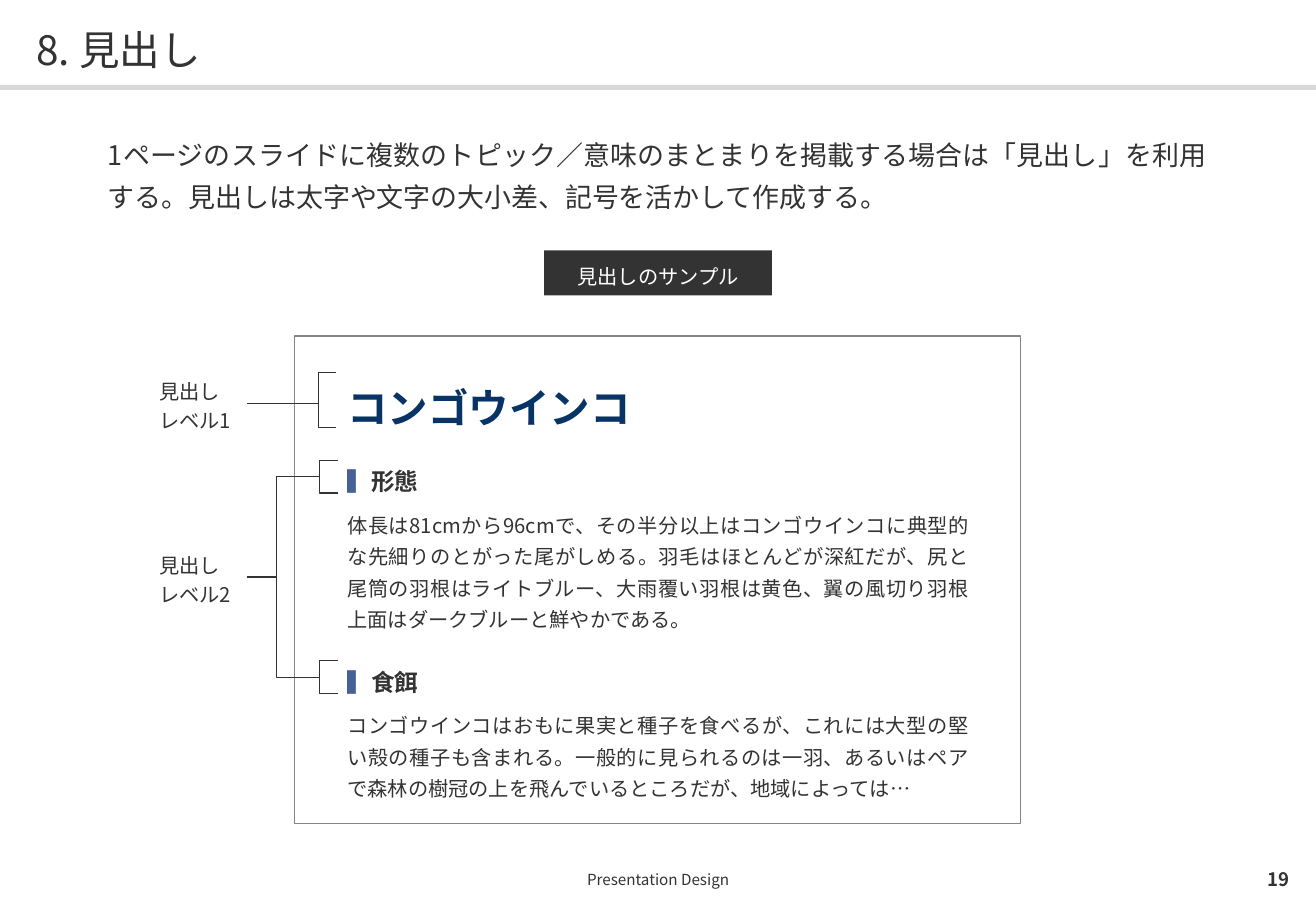
"""Build the slide on heading levels with an annotated sample."""
from lxml.etree import SubElement
from pptx import Presentation
from pptx.dml.color import RGBColor
from pptx.enum.shapes import MSO_CONNECTOR, MSO_SHAPE
from pptx.enum.text import MSO_ANCHOR, MSO_AUTO_SIZE, PP_ALIGN
from pptx.oxml.ns import qn
from pptx.util import Pt

FONT = "Noto Sans CJK JP"
DARK, NAVY, BLUE = "333333", "073365", "466098"
WHITE, GRAY, PALE = "FFFFFF", "858585", "D9D9D9"

TITLE = "8. 見出し"
LEAD = ("1ページのスライドに複数のトピック／意味のまとまりを掲載する場合は「見出し」を利用する。"
        "見出しは太字や文字の大小差、記号を活かして作成する。")
TAG = "見出しのサンプル"
SAMPLE_TITLE = "コンゴウインコ"
SECTIONS = [
    ("形態", "体長は81cmから96cmで、その半分以上はコンゴウインコに典型的な先細りのとがった尾がしめる。"
             "羽毛はほとんどが深紅だが、尻と尾筒の羽根はライトブルー、大雨覆い羽根は黄色、"
             "翼の風切り羽根上面はダークブルーと鮮やかである。"),
    ("食餌", "コンゴウインコはおもに果実と種子を食べるが、これには大型の堅い殻の種子も含まれる。"
             "一般的に見られるのは一羽、あるいはペアで森林の樹冠の上を飛んでいるところだが、地域によっては…"),
]
FOOTER, PAGE = "Presentation Design", "19"

LEVEL1_Y = 239
LEVEL2_YS = (282.6, 401.4)
LEVEL2_Y = sum(LEVEL2_YS) / 2
LABELS = [("レベル1", LEVEL1_Y, 188.6), ("レベル2", LEVEL2_Y, 164)]
BRACKETS = [(188.6, 237.2, 10.8, 32.4)]
BRACKETS += [(189.4, y, 10.8, 19.4) for y in LEVEL2_YS]
BRACKETS += [(164, LEVEL2_Y, 25.4, LEVEL2_YS[1] - LEVEL2_YS[0])]


def rgb(value):
    return RGBColor.from_string(value)


def add_text(tf, runs, size=12, color=DARK, bold=False, align=PP_ALIGN.JUSTIFY,
             spacing=1.2, before=0, after=0):
    """Append one paragraph; runs is a string or a list of (text, color)."""
    p = tf.paragraphs[0]
    if p.runs:
        p = tf.add_paragraph()
    p.alignment, p.line_spacing = align, spacing
    p.space_before, p.space_after = Pt(before), Pt(after)
    for text, run_color in [(runs, color)] if isinstance(runs, str) else runs:
        r = p.add_run()
        r.text = text
        r.font.size, r.font.bold, r.font.name = Pt(size), bold, FONT
        r.font.color.rgb = rgb(run_color)
        SubElement(r.font._element, qn("a:ea"), typeface=FONT)
    return p


def set_frame(sp, anchor=MSO_ANCHOR.TOP, insets=(0, 0, 0, 0)):
    tf = sp.text_frame
    tf.word_wrap, tf.auto_size, tf.vertical_anchor = True, MSO_AUTO_SIZE.NONE, anchor
    tf.margin_left, tf.margin_top, tf.margin_right, tf.margin_bottom = map(Pt, insets)
    return tf


def add_box(s, box, anchor=MSO_ANCHOR.TOP):
    return set_frame(s.shapes.add_textbox(*map(Pt, box)), anchor)


def fill_placeholder(sp, box, anchor=MSO_ANCHOR.TOP):
    sp.left, sp.top, sp.width, sp.height = map(Pt, box)
    return set_frame(sp, anchor)


def add_shape(s, kind, box, fill=None, line=None):
    sp = s.shapes.add_shape(kind, *map(Pt, box))
    sp.shadow.inherit = False
    if fill:
        sp.fill.solid()
        sp.fill.fore_color.rgb = rgb(fill)
    else:
        sp.fill.background()
    if line:
        sp.line.color.rgb, sp.line.width = rgb(line), Pt(0.75)
    else:
        sp.line.fill.background()
    return sp


def add_line(s, x1, x2, y):
    c = s.shapes.add_connector(MSO_CONNECTOR.STRAIGHT, Pt(x1), Pt(y), Pt(x2), Pt(y))
    c.line.color.rgb, c.line.width = rgb(DARK), Pt(0.75)
    SubElement(c._element.spPr, qn("a:effectLst"))


def main():
    prs = Presentation()
    prs.slide_width, prs.slide_height = Pt(780), Pt(540)
    s = prs.slides.add_slide(prs.slide_layouts[1])

    add_shape(s, MSO_SHAPE.RECTANGLE, (0, 50.4, 780, 2.9), fill=PALE)
    tf = fill_placeholder(s.shapes.title, (21.6, 12.2, 737, 31), MSO_ANCHOR.MIDDLE)
    add_text(tf, TITLE, size=24, align=PP_ALIGN.LEFT, spacing=1.1)

    tf = fill_placeholder(s.placeholders[1], (64, 76.3, 652, 49))
    pPr = add_text(tf, LEAD, size=16, spacing=1.3)._p.get_or_add_pPr()
    pPr.set("marL", "0")
    pPr.set("indent", "0")
    SubElement(pPr, qn("a:buNone"))

    tag = add_shape(s, MSO_SHAPE.RECTANGLE, (322.5, 148.5, 135, 26.6), fill=DARK)
    tf = set_frame(tag, MSO_ANCHOR.MIDDLE, (8.6, 5.8, 8.6, 4.3))
    add_text(tf, TAG, color=WHITE, align=PP_ALIGN.CENTER)

    add_shape(s, MSO_SHAPE.RECTANGLE, (174.4, 199.2, 430.6, 289.2), fill=WHITE, line=GRAY)
    tf = add_box(s, (205.9, 221, 368.6, 255.6))
    add_text(tf, SAMPLE_TITLE, size=24, color=NAVY, bold=True, after=6)
    for heading, body in SECTIONS:
        add_text(tf, [("▍", BLUE), (heading, DARK)], size=14, bold=True, before=12, after=6)
        add_text(tf, body, spacing=1.3, after=6)

    for level, y, line_end in LABELS:
        add_line(s, 146.2, line_end, y)
        tf = add_box(s, (94.3, y - 17, 48, 34))
        for text in ("見出し", level):
            add_text(tf, text, align=PP_ALIGN.LEFT)

    for x, y, w, h in BRACKETS:
        sp = add_shape(s, MSO_SHAPE.LEFT_BRACKET, (x, y - h / 2, w, h), line=DARK)
        sp.adjustments[0] = 0

    tf = add_box(s, (64, 511.2, 652, 20.6), MSO_ANCHOR.MIDDLE)
    add_text(tf, FOOTER, size=9, align=PP_ALIGN.CENTER, spacing=1.0)
    tf = add_box(s, (727, 511.2, 37.6, 20.2), MSO_ANCHOR.MIDDLE)
    add_text(tf, PAGE, size=11, bold=True, align=PP_ALIGN.RIGHT, spacing=1.0)

    prs.save("out.pptx")


if __name__ == "__main__":
    main()
